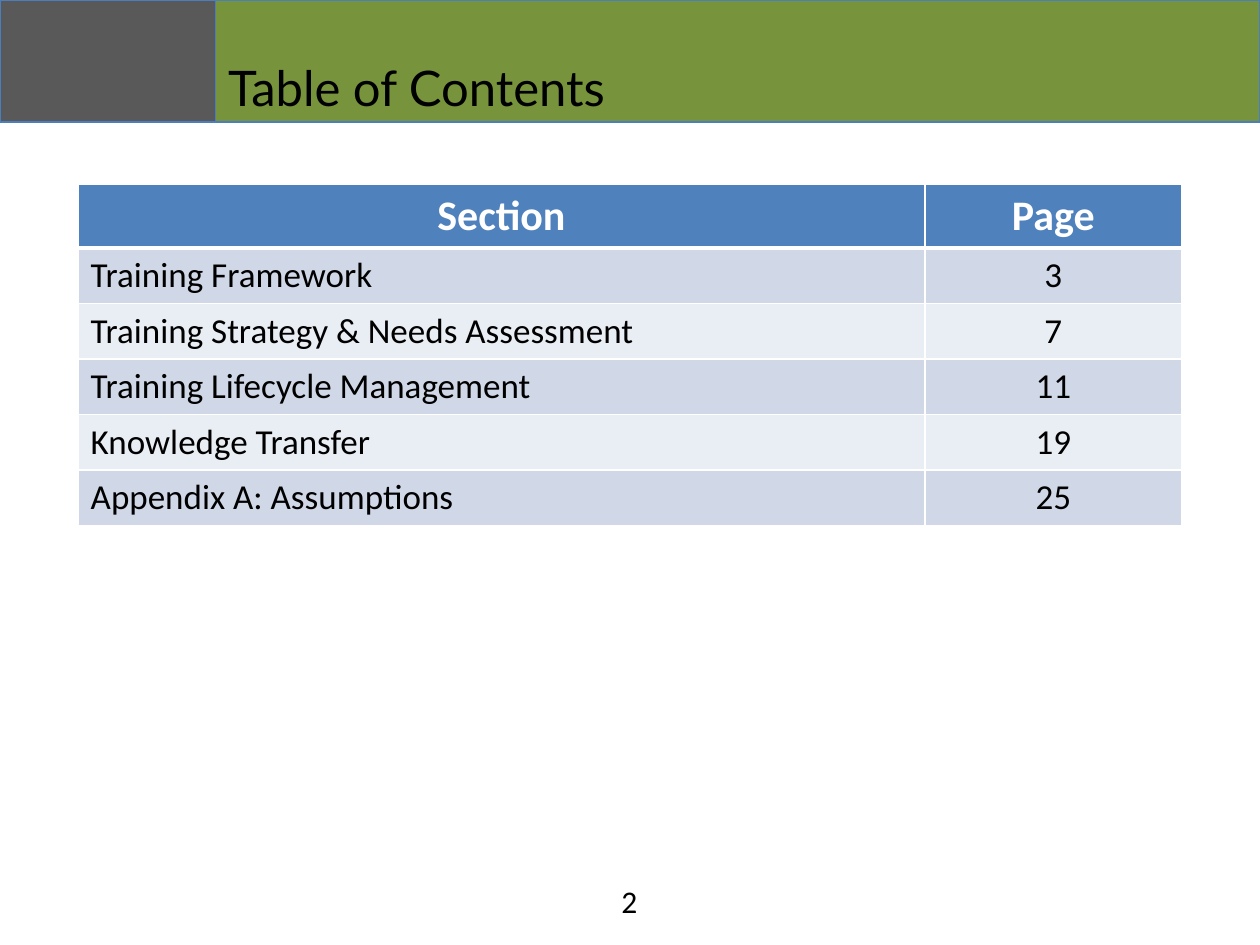
from lxml import etree
from pptx import Presentation
from pptx.dml.color import RGBColor
from pptx.enum.shapes import MSO_SHAPE
from pptx.enum.text import MSO_ANCHOR, MSO_AUTO_SIZE, PP_ALIGN
from pptx.oxml.ns import qn
from pptx.util import Inches, Pt

RECTANGLE = MSO_SHAPE.RECTANGLE
BOTTOM = MSO_ANCHOR.BOTTOM
NO_AUTOFIT = MSO_AUTO_SIZE.NONE
LEFT, CENTER = PP_ALIGN.LEFT, PP_ALIGN.CENTER
TITLE_ONLY = 5

COLORS = {
    "gray": "595959",
    "green": "77933C",
    "outline": "4B7EBC",
    "header": "4F81BD",
    "odd_row": "D0D8E8",
    "even_row": "E9EDF4",
    "white": "FFFFFF",
    "black": "000000",
}

SECTIONS = [
    ("Training Framework", "3"),
    ("Training Strategy & Needs Assessment", "7"),
    ("Training Lifecycle Management", "11"),
    ("Knowledge Transfer", "19"),
    ("Appendix A: Assumptions", "25"),
]


def rgb(name):
    """Return the named colour."""
    return RGBColor.from_string(COLORS[name])


def style_paragraph(paragraph, size, color="black", align=LEFT, bold=False, font="Calibri"):
    """Set the alignment and font of a paragraph."""
    paragraph.alignment = align
    paragraph.font.name = font
    paragraph.font.size = Pt(size)
    paragraph.font.bold = bold
    paragraph.font.color.rgb = rgb(color)


def set_borders(cell, top, bottom):
    """Give a cell white borders, with its top and bottom widths in points."""
    properties = cell._tc.get_or_add_tcPr()
    widths = {"a:lnL": 1, "a:lnR": 1, "a:lnT": top, "a:lnB": bottom}
    for position, (tag, width) in enumerate(widths.items()):
        border = etree.Element(qn(tag), w=str(Pt(width)))
        fill = etree.SubElement(border, qn("a:solidFill"))
        etree.SubElement(fill, qn("a:srgbClr"), val=COLORS["white"])
        properties.insert(position, border)


def add_banner(slide, left, top, width, height):
    """Draw the two-colour banner and set the title on it."""
    gray_width = Inches(1.71)
    title = slide.shapes.title
    bands = [
        (left, gray_width, "gray"),
        (left + gray_width, width - gray_width, "green"),
    ]
    for band_left, band_width, color in bands:
        band = slide.shapes.add_shape(RECTANGLE, band_left, top, band_width, height)
        band.shadow.inherit = False
        band.fill.solid()
        band.fill.fore_color.rgb = rgb(color)
        band.line.color.rgb = rgb("outline")
        band.line.width = Pt(0.75)
        title._element.addprevious(band._element)

    title.left, title.top = left + gray_width, top
    title.width, title.height = Inches(5.21), height
    title.text_frame.text = "Table of Contents"
    title.text_frame.vertical_anchor = BOTTOM
    title.text_frame.auto_size = NO_AUTOFIT
    style_paragraph(title.text_frame.paragraphs[0], 28, font="Lato")


def add_contents(slide, left, top, width, height):
    """Place the table of sections and their pages."""
    rows = [("Section", "Page")] + SECTIONS
    page_width, header_height = Inches(2.04), Inches(0.5)
    contents = slide.shapes.add_table(len(rows), 2, left, top, width, height).table
    contents.columns[0].width = width - page_width
    contents.columns[1].width = page_width
    for row_index, row in enumerate(rows):
        is_header = row_index == 0
        section_height = (height - header_height) // len(SECTIONS)
        contents.rows[row_index].height = header_height if is_header else section_height
        band = "header" if is_header else "odd_row" if row_index % 2 else "even_row"
        for column_index, text in enumerate(row):
            cell = contents.cell(row_index, column_index)
            cell.text = text
            cell.fill.solid()
            cell.fill.fore_color.rgb = rgb(band)
            set_borders(cell, 3 if row_index == 1 else 1, 3 if is_header else 1)
            paragraph = cell.text_frame.paragraphs[0]
            if is_header:
                style_paragraph(paragraph, 24, "white", CENTER, True)
            else:
                style_paragraph(paragraph, 20, align=CENTER if column_index else LEFT)


def add_page_number(slide, left, top, width, height):
    """Place the page number at the foot of the slide."""
    page_number = slide.shapes.add_textbox(left, top, width, height).text_frame
    page_number.word_wrap = True
    page_number.text = "2"
    style_paragraph(page_number.paragraphs[0], 18, align=CENTER)


def main():
    """Build and save the contents slide."""
    presentation = Presentation()
    presentation.slide_width, presentation.slide_height = Inches(10), Inches(7.5)
    slide = presentation.slides.add_slide(presentation.slide_layouts[TITLE_ONLY])
    add_banner(slide, 0, 0, presentation.slide_width, Inches(0.97))
    add_contents(slide, Inches(0.62), Inches(1.46), Inches(8.76), Inches(2.7))
    add_page_number(slide, Inches(3.83), Inches(6.95), Inches(2.33), Inches(0.4))
    presentation.save("out.pptx")


if __name__ == "__main__":
    main()
